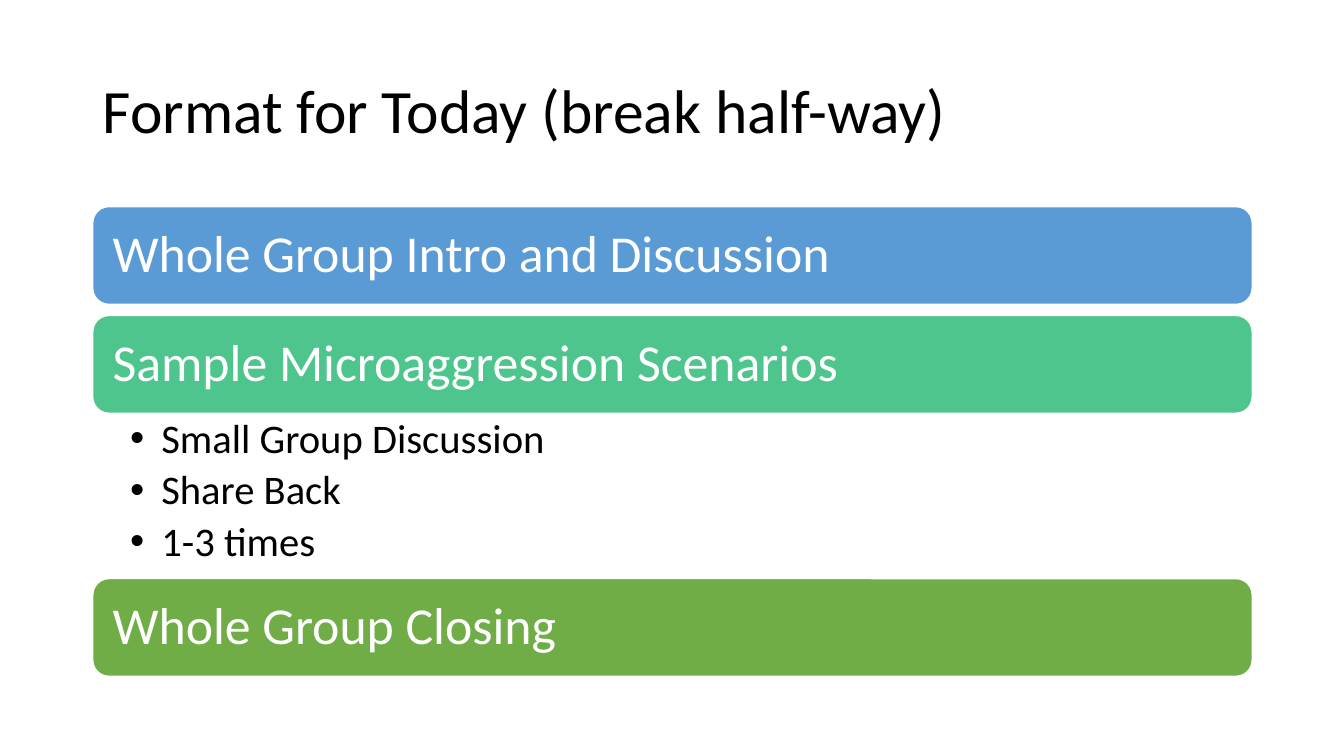
from lxml.etree import SubElement
from pptx import Presentation
from pptx.dml.color import RGBColor
from pptx.enum.shapes import MSO_SHAPE
from pptx.enum.text import MSO_ANCHOR, PP_ALIGN
from pptx.oxml.ns import qn
from pptx.util import Inches, Pt

BLACK = RGBColor(0x00, 0x00, 0x00)
WHITE = RGBColor(0xFF, 0xFF, 0xFF)
BLUE = RGBColor(0x5B, 0x9B, 0xD5)
TEAL = RGBColor(0x4D, 0xC5, 0x8D)
GREEN = RGBColor(0x70, 0xAD, 0x47)
FONT = "Calibri"

TITLE = "Format for Today (break half-way)"
SECTIONS = [
    ("Whole Group Intro and Discussion", BLUE, []),
    ("Sample Microaggression Scenarios", TEAL,
     ["Small Group Discussion", "Share Back", "1-3 times"]),
    ("Whole Group Closing", GREEN, []),
]

LEFT, WIDTH = 0.92, 11.5
TITLE_TOP, TITLE_HEIGHT = 0.4, 1.45
BARS_TOP, BAR_HEIGHT, BAR_GAP = 2.05, 0.97, 0.11
STEPS_HEIGHT = 1.64
BULLET_INDENT = Inches(0.31)


def write(shape, lines, size, color, insets, anchor, space_after=0):
    """Fill a shape with left-aligned lines; insets are left, top, right, bottom."""
    frame = shape.text_frame
    frame.word_wrap = True
    frame.vertical_anchor = anchor
    (frame.margin_left, frame.margin_top,
     frame.margin_right, frame.margin_bottom) = map(Inches, insets)
    frame.text = "\n".join(lines)
    for paragraph in frame.paragraphs:
        paragraph.alignment = PP_ALIGN.LEFT
        paragraph.line_spacing = 0.9
        paragraph.space_after = Pt(space_after)
        font = paragraph.runs[0].font
        font.name, font.size = FONT, Pt(size)
        font.color.rgb = color


def add_bullet(paragraph):
    properties = paragraph._p.get_or_add_pPr()
    properties.set("marL", str(BULLET_INDENT))
    properties.set("indent", str(-BULLET_INDENT))
    SubElement(properties, qn("a:buFont"), typeface="Arial")
    SubElement(properties, qn("a:buChar"), char="•")


def add_bar(slide, top, heading, color):
    bar = slide.shapes.add_shape(
        MSO_SHAPE.ROUNDED_RECTANGLE,
        Inches(LEFT), Inches(top), Inches(WIDTH), Inches(BAR_HEIGHT))
    bar.shadow.inherit = False
    bar.fill.solid()
    bar.fill.fore_color.rgb = color
    bar.line.color.rgb = WHITE
    bar.line.width = Pt(1)
    write(bar, [heading], 37, WHITE, (0.15,) * 4, MSO_ANCHOR.MIDDLE)


def add_text(slide, top, height):
    return slide.shapes.add_textbox(
        Inches(LEFT), Inches(top), Inches(WIDTH), Inches(height))


def main():
    deck = Presentation()
    deck.slide_width, deck.slide_height = Inches(13.33), Inches(7.5)
    slide = deck.slides.add_slide(deck.slide_layouts[6])

    title = add_text(slide, TITLE_TOP, TITLE_HEIGHT)
    write(title, [TITLE], 44, BLACK, (0.1, 0.05, 0.1, 0.05), MSO_ANCHOR.MIDDLE)

    top = BARS_TOP
    for heading, color, steps in SECTIONS:
        add_bar(slide, top, heading, color)
        top += BAR_HEIGHT
        if steps:
            steps_box = add_text(slide, top, STEPS_HEIGHT)
            write(steps_box, steps, 29, BLACK, (0.37, 0.05, 0.29, 0.05),
                  MSO_ANCHOR.TOP, space_after=5.5)
            for paragraph in steps_box.text_frame.paragraphs:
                add_bullet(paragraph)
            top += STEPS_HEIGHT
        else:
            top += BAR_GAP

    deck.save("out.pptx")


if __name__ == "__main__":
    main()
